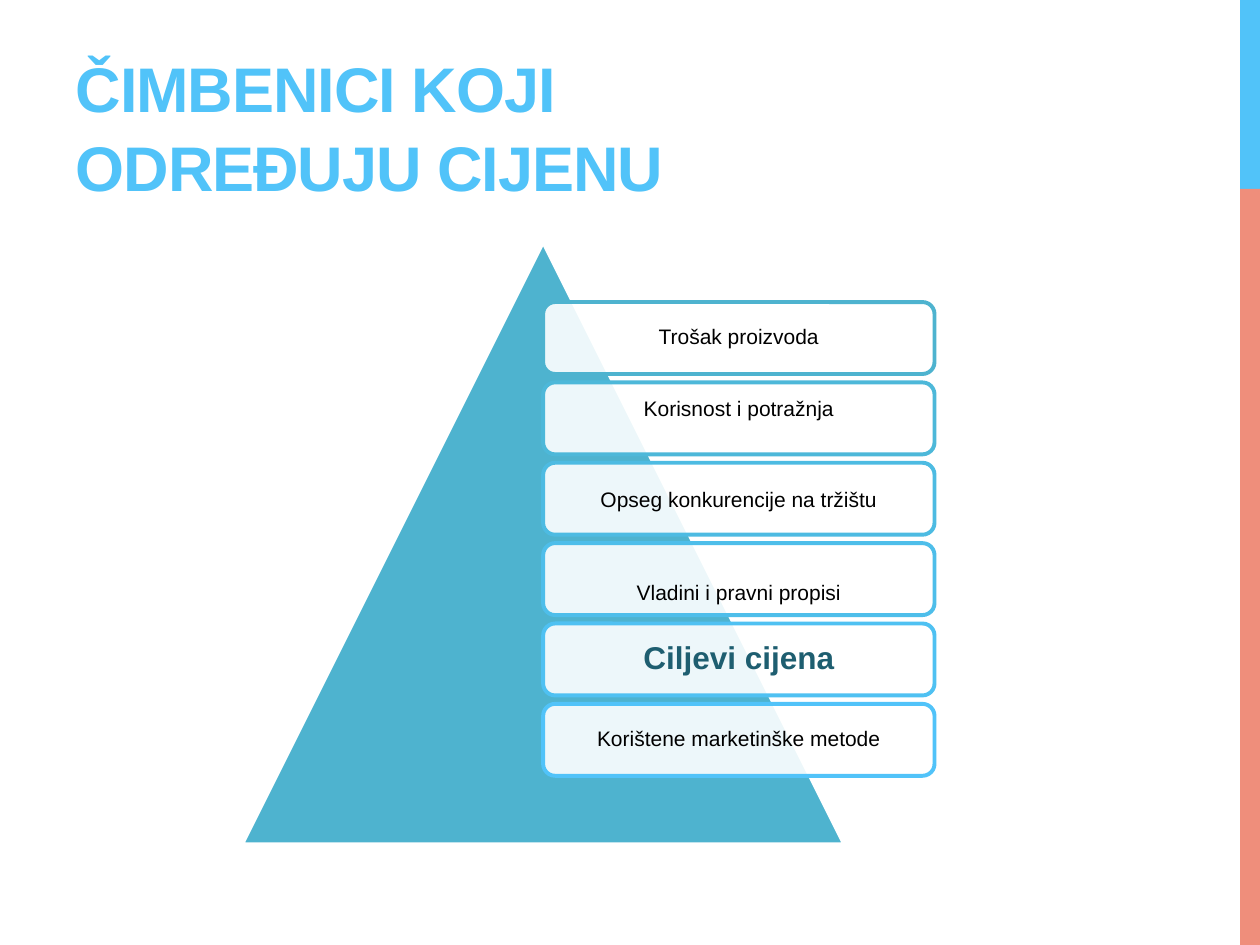
from lxml import etree
from pptx import Presentation
from pptx.dml.color import RGBColor
from pptx.enum.shapes import MSO_SHAPE
from pptx.enum.text import MSO_ANCHOR, MSO_AUTO_SIZE, PP_ALIGN
from pptx.oxml.ns import qn
from pptx.util import Cm, Pt

RECT, ROUNDED = MSO_SHAPE.RECTANGLE, MSO_SHAPE.ROUNDED_RECTANGLE
TRIANGLE = MSO_SHAPE.ISOSCELES_TRIANGLE
MIDDLE, BOTTOM = MSO_ANCHOR.MIDDLE, MSO_ANCHOR.BOTTOM
LEFT, CENTER = PP_ALIGN.LEFT, PP_ALIGN.CENTER

FONT = "Arial"
BLUE = RGBColor(0x51, 0xC3, 0xF9)
CORAL = RGBColor(0xEF, 0x8E, 0x7B)
TEAL = RGBColor(0x4E, 0xB3, 0xCF)
DARK_TEAL = RGBColor(0x1E, 0x5E, 0x70)
WHITE = RGBColor(0xFF, 0xFF, 0xFF)
BLACK = RGBColor(0, 0, 0)

# Content
TITLE = "ČIMBENICI KOJI ODREĐUJU CIJENU"
# Text, outline, line spacing, extra top inset, extra bottom inset (cm)
FACTORS = [
    ("Trošak proizvoda", TEAL, 0.9, 0, 0),
    ("Korisnost i potražnja", RGBColor(0x4D, 0xB8, 0xD9), 1, 0, 0.4),
    ("Opseg konkurencije na tržištu", RGBColor(0x4D, 0xBB, 0xE2), 1, 0, 0),
    ("Vladini i pravni propisi", RGBColor(0x4E, 0xBE, 0xEA), 1, 0.53, 0),
    ("Ciljevi cijena", RGBColor(0x4F, 0xC1, 0xF2), 0.9, 0, 0),
    ("Korištene marketinške metode", BLUE, 0.9, 0, 0),
]
HIGHLIGHT = "Ciljevi cijena"

# Layout (cm)
SLIDE_W, SLIDE_H = 25.4, 19.05
BAR_W, BAR_SPLIT = 0.4, 3.81
BOX_LEFT, BOX_TOP, BOX_W, BOX_H, BOX_PITCH = 10.95, 6.09, 7.89, 1.45, 1.62
INSET = 0.13


def add_shape(slide, kind, x, y, w, h, fill, line=None):
    sp = slide.shapes.add_shape(kind, Cm(x), Cm(y), Cm(w), Cm(h))
    sp.shadow.inherit = False
    sp.fill.solid()
    sp.fill.fore_color.rgb = fill
    if line is None:
        sp.line.fill.background()
    else:
        sp.line.color.rgb = line
        sp.line.width = Pt(2.25)
    return sp


def add_text(p, text, size, color, bold, align, spacing):
    p.alignment = align
    p.line_spacing = spacing
    r = p.add_run()
    r.text = text
    r.font.name = FONT
    r.font.size = Pt(size)
    r.font.bold = bold
    r.font.color.rgb = color
    return r


def set_opacity(sp, percent):
    color = sp.fill._xPr.find(qn("a:solidFill"))[0]
    etree.SubElement(color, qn("a:alpha")).set("val", str(percent * 1000))


def main():
    prs = Presentation()
    prs.slide_width, prs.slide_height = Cm(SLIDE_W), Cm(SLIDE_H)
    slide = prs.slides.add_slide(prs.slide_layouts[5])

    # Side bars
    bar_left = SLIDE_W - BAR_W
    add_shape(slide, RECT, bar_left, 0, BAR_W, BAR_SPLIT, BLUE)
    add_shape(slide, RECT, bar_left, BAR_SPLIT, BAR_W, SLIDE_H - BAR_SPLIT, CORAL)

    # Title
    title = slide.shapes.title
    title.left, title.top = Cm(1.27), Cm(0.43)
    title.width, title.height = Cm(16.08), Cm(3.81)
    tf = title.text_frame
    tf.auto_size = MSO_AUTO_SIZE.NONE
    tf.word_wrap = True
    tf.vertical_anchor = BOTTOM
    r = add_text(tf.paragraphs[0], TITLE, 36, BLUE, True, LEFT, 1.05)
    r.font._element.set("spc", "-60")

    # Pyramid
    add_shape(slide, TRIANGLE, 4.88, 4.88, 12.14, 12.14, TEAL, WHITE)

    # Factor boxes
    for i, (text, outline, spacing, extra_top, extra_bottom) in enumerate(FACTORS):
        sp = add_shape(slide, ROUNDED, BOX_LEFT, BOX_TOP + i * BOX_PITCH,
                       BOX_W, BOX_H, WHITE, outline)
        set_opacity(sp, 90)
        tf = sp.text_frame
        tf.word_wrap = True
        tf.vertical_anchor = MIDDLE
        tf.margin_left = tf.margin_right = Cm(INSET)
        tf.margin_top = Cm(INSET + extra_top)
        tf.margin_bottom = Cm(INSET + extra_bottom)
        strong = text == HIGHLIGHT
        add_text(tf.paragraphs[0], text, 18 if strong else 12,
                 DARK_TEAL if strong else BLACK, strong, CENTER, spacing)

    prs.save("out.pptx")


if __name__ == "__main__":
    main()
